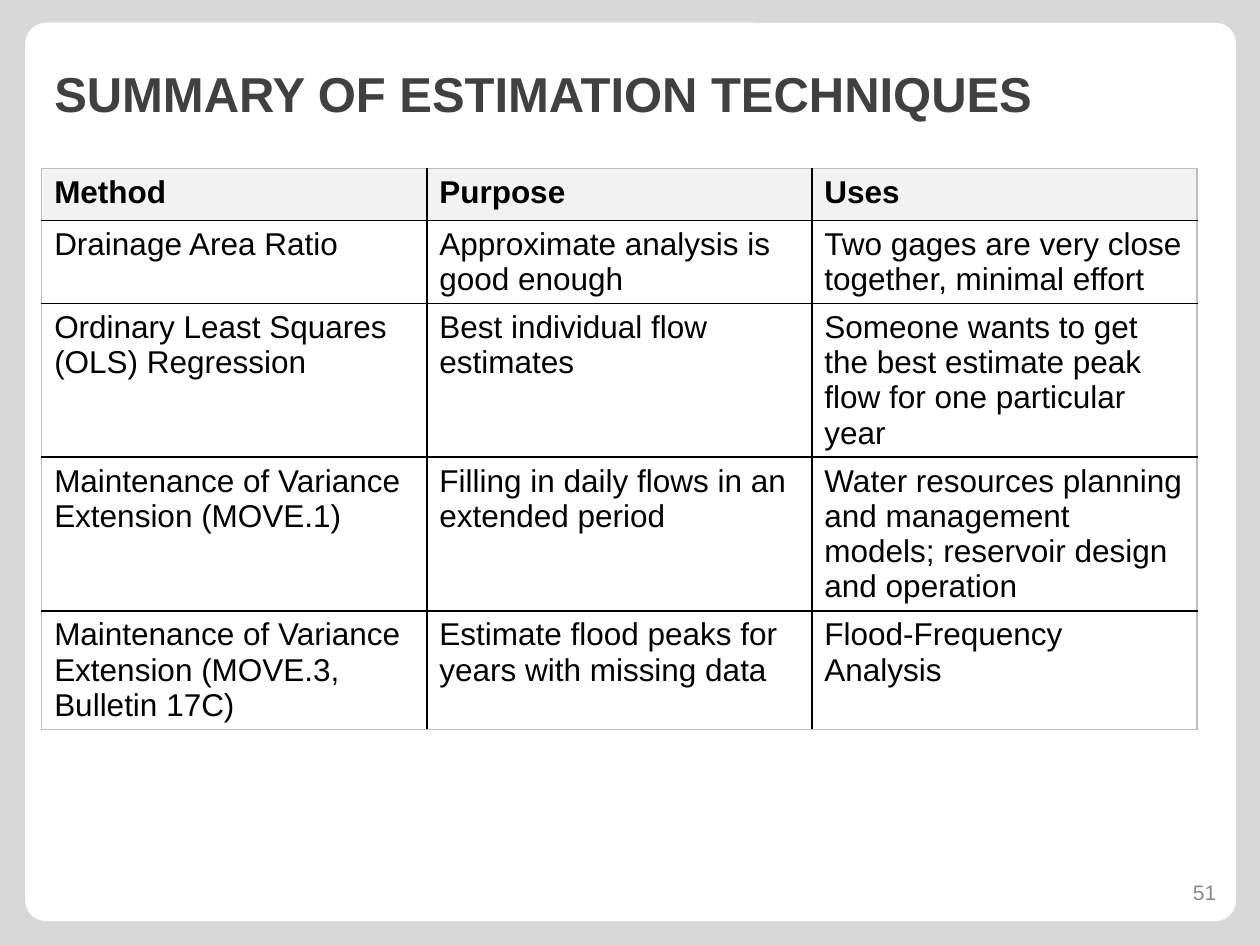
from lxml.etree import SubElement
from pptx import Presentation
from pptx.dml.color import RGBColor
from pptx.enum.shapes import MSO_SHAPE
from pptx.enum.text import MSO_ANCHOR, PP_ALIGN
from pptx.oxml.ns import qn
from pptx.util import Cm, Pt

BACKDROP = RGBColor(0xD8, 0xD8, 0xD8)
WHITE = RGBColor(0xFF, 0xFF, 0xFF)
BLACK = RGBColor(0x00, 0x00, 0x00)
HEADER_FILL = RGBColor(0xF2, 0xF2, 0xF2)
OUTER_BORDER = RGBColor(0xBF, 0xBF, 0xBF)
TITLE_COLOR = RGBColor(0x40, 0x40, 0x40)
NUMBER_COLOR = RGBColor(0x89, 0x89, 0x89)

LEFT, WIDTH = Cm(0.84), Cm(23.29)
ROW_HEIGHT = Cm(1.04)

TECHNIQUES = [
    ("Method", "Purpose", "Uses"),
    ("Drainage Area Ratio", "Approximate analysis is good enough",
     "Two gages are very close together, minimal effort"),
    ("Ordinary Least Squares (OLS) Regression", "Best individual flow estimates",
     "Someone wants to get the best estimate peak flow for one particular year"),
    ("Maintenance of Variance Extension (MOVE.1)",
     "Filling in daily flows in an extended period",
     "Water resources planning and management models; reservoir design and operation"),
    ("Maintenance of Variance Extension (MOVE.3, Bulletin 17C)",
     "Estimate flood peaks for years with missing data",
     "Flood-Frequency Analysis"),
]


def write_text(frame, text, color, **formats):
    frame.text = text
    font = frame.paragraphs[0].runs[0].font
    for name, value in {"name": "Arial", **formats}.items():
        setattr(font, name, value)
    font.color.rgb = color


def add_panel(page):
    """Add the rounded white panel behind everything else."""
    panel = page.shapes.add_shape(
        MSO_SHAPE.ROUNDED_RECTANGLE, Cm(0.51), Cm(0.46), Cm(24.41), Cm(18.11))
    panel.adjustments[0] = 0.023
    panel.shadow.inherit = False
    panel.fill.solid()
    panel.fill.fore_color.rgb = WHITE
    panel.line.fill.background()
    page.shapes[0].element.addprevious(panel.element)


def set_title(page, text):
    title = page.shapes.title
    title.left, title.top, title.width, title.height = LEFT, Cm(0.76), WIDTH, Cm(2.24)
    frame = title.text_frame
    frame.vertical_anchor = MSO_ANCHOR.MIDDLE
    write_text(frame, text, TITLE_COLOR, size=Pt(28), bold=True)
    frame.paragraphs[0].alignment = PP_ALIGN.LEFT


def set_borders(cell, outer_sides):
    """Draw all four borders, in grey on the outer sides of the table."""
    properties = cell._tc.get_or_add_tcPr()
    for side in "LRTB":
        color = OUTER_BORDER if side in outer_sides else BLACK
        line = SubElement(properties, qn(f"a:ln{side}"), w=str(Pt(1)))
        fill = SubElement(line, qn("a:solidFill"))
        SubElement(fill, qn("a:srgbClr"), val=str(color))


def add_techniques_table(page):
    row_count, column_count = len(TECHNIQUES), len(TECHNIQUES[0])
    table = page.shapes.add_table(
        row_count, column_count, LEFT, Cm(3.4), WIDTH, ROW_HEIGHT * row_count).table
    table.horz_banding = False
    for row, texts in enumerate(TECHNIQUES):
        for column, text in enumerate(texts):
            cell = table.cell(row, column)
            is_header = row == 0
            at_edge = {"L": column == 0, "R": column == column_count - 1,
                       "T": is_header, "B": row == row_count - 1}
            set_borders(cell, [side for side, outer in at_edge.items() if outer])
            cell.fill.solid()
            cell.fill.fore_color.rgb = HEADER_FILL if is_header else WHITE
            write_text(cell.text_frame, text, BLACK, size=Pt(18), bold=is_header)


def add_page_number(page, number):
    box = page.shapes.add_textbox(Cm(23.27), Cm(17.48), Cm(2.03), Cm(1.02))
    frame = box.text_frame
    frame.word_wrap = True
    frame.vertical_anchor = MSO_ANCHOR.MIDDLE
    write_text(frame, number, NUMBER_COLOR, size=Pt(12))
    frame.paragraphs[0].alignment = PP_ALIGN.CENTER


def main():
    deck = Presentation()
    deck.slide_width, deck.slide_height = Cm(25.4), Cm(19.05)
    page = deck.slides.add_slide(deck.slide_layouts.get_by_name("Title Only"))
    page.background.fill.solid()
    page.background.fill.fore_color.rgb = BACKDROP
    add_panel(page)
    set_title(page, "SUMMARY OF ESTIMATION TECHNIQUES")
    add_techniques_table(page)
    add_page_number(page, "51")
    deck.save("out.pptx")


if __name__ == "__main__":
    main()
